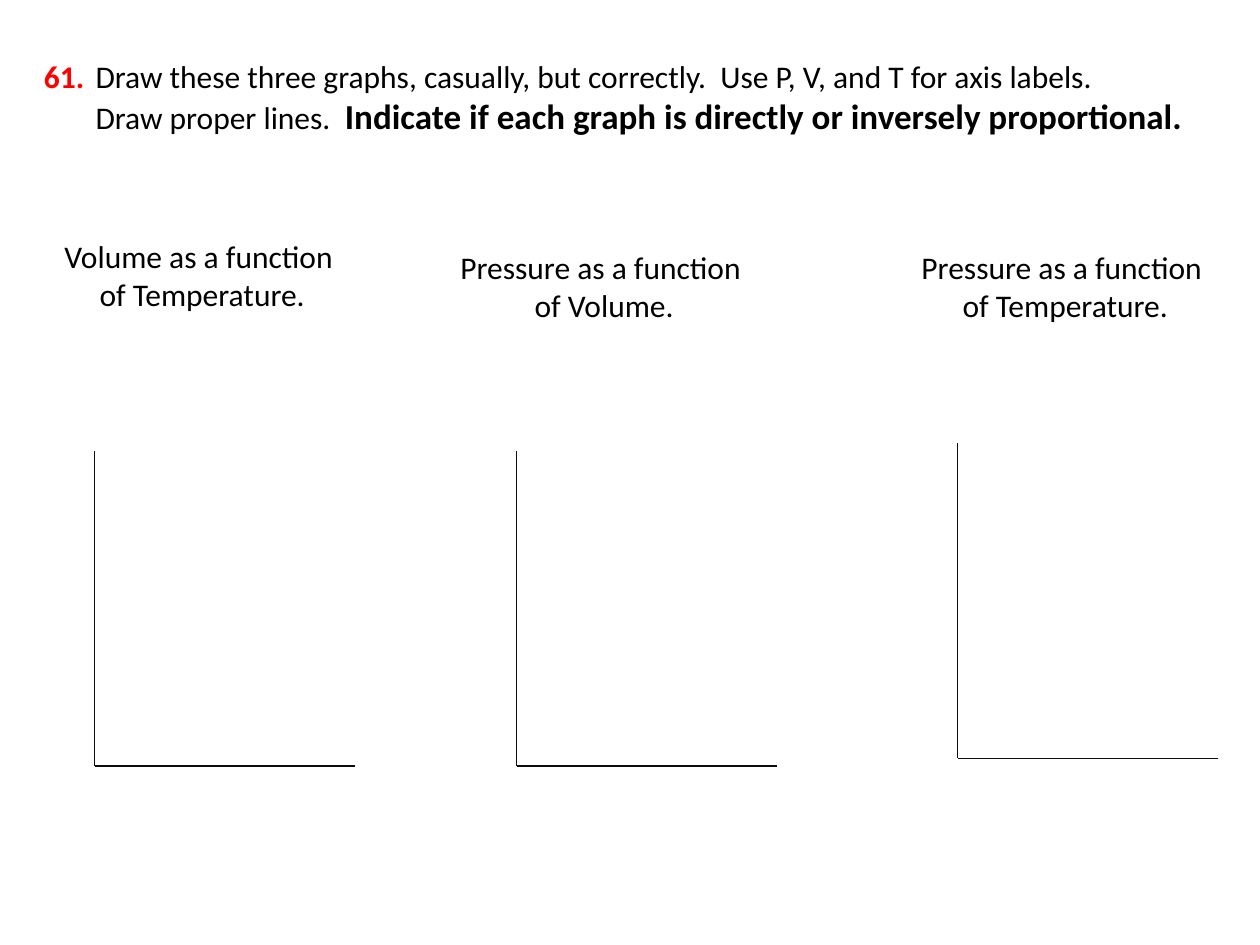
import pptx
import pptx.dml.color
import pptx.enum.shapes
import pptx.enum.text
import pptx.util
from pptx.util import Inches

COLORS = {"text": "000000", "number": "FF0000", "axis": "0D0D0D"}


class Worksheet:
    """Holds the style and the current slide."""

    font = "Calibri"
    size = 18

    def __init__(self, slide):
        self.slide = slide

    def format_run(self, run, color="text", size=None, bold=False):
        run.font.name = self.font
        run.font.size = pptx.util.Pt(size or self.size)
        run.font.bold = bold
        run.font.color.rgb = pptx.dml.color.RGBColor.from_string(COLORS[color])

    def text_frame(self, left, top, width, height):
        box = self.slide.shapes.add_textbox(
            Inches(left), Inches(top), Inches(width), Inches(height))
        frame = box.text_frame
        frame.word_wrap = True
        frame.auto_size = pptx.enum.text.MSO_AUTO_SIZE.SHAPE_TO_FIT_TEXT
        return frame

    def question(self, number, first_line, second_line, emphasis):
        paragraph = self.text_frame(0.25, 0.4, 9.42, 0.74).paragraphs[0]
        # Hanging indent: the tab after the number lines up both lines
        indent = Inches(0.41)
        properties = paragraph._p.get_or_add_pPr()
        properties.set("marL", str(indent))
        properties.set("indent", str(-indent))
        paragraph.text = number
        self.format_run(paragraph.runs[0], "number", bold=True)
        for words, style in (("\t" + first_line, {}),
                             (second_line, {}),
                             (emphasis, {"size": 20, "bold": True})):
            if words == second_line:
                paragraph.add_line_break()
            run = paragraph.add_run()
            run.text = words
            self.format_run(run, **style)

    def caption(self, words, left, top):
        frame = self.text_frame(left, top, 2.75, 0.71)
        frame.text = words
        paragraph = frame.paragraphs[0]
        paragraph.alignment = pptx.enum.text.PP_ALIGN.CENTER
        for run in paragraph.runs:
            self.format_run(run)

    def axis(self, start, end):
        line = self.slide.shapes.add_connector(
            pptx.enum.shapes.MSO_CONNECTOR.STRAIGHT,
            *(Inches(value) for value in start + end))
        line.line.color.rgb = pptx.dml.color.RGBColor.from_string(COLORS["axis"])
        line.line.width = pptx.util.Pt(1)
        line._element.spPr.append(pptx.oxml.parse_xml(
            '<a:effectLst xmlns:a="http://schemas.openxmlformats.org/drawingml/2006/main"/>'))

    def axes(self, left, top, width=2.07, height=2.5):
        origin = (left, top + height)
        self.axis((left, top), origin)
        self.axis((left + width, top + height), origin)


def main():
    presentation = pptx.Presentation()
    presentation.slide_width = Inches(10)
    presentation.slide_height = Inches(7.5)
    blank_layout = presentation.slide_layouts[6]
    sheet = Worksheet(presentation.slides.add_slide(blank_layout))

    # Question
    sheet.question(
        "61.",
        "Draw these three graphs, casually, but correctly.  "
        "Use P, V, and T for axis labels.",
        "Draw proper lines.  ",
        "Indicate if each graph is directly or inversely proportional.")

    # Graphs: quantities, caption corner, top of the axes
    graphs = [
        ("Volume", "Temperature", (0.23, 1.83), (0.75, 3.58)),
        ("Pressure", "Volume", (3.42, 1.92), (4.1, 3.58)),
        ("Pressure", "Temperature", (7.08, 1.92), (7.6, 3.52)),
    ]
    for quantity, variable, caption_corner, axes_corner in graphs:
        sheet.caption(f"{quantity} as a function \vof {variable}.", *caption_corner)
        sheet.axes(*axes_corner)

    presentation.save("out.pptx")


if __name__ == "__main__":
    main()
